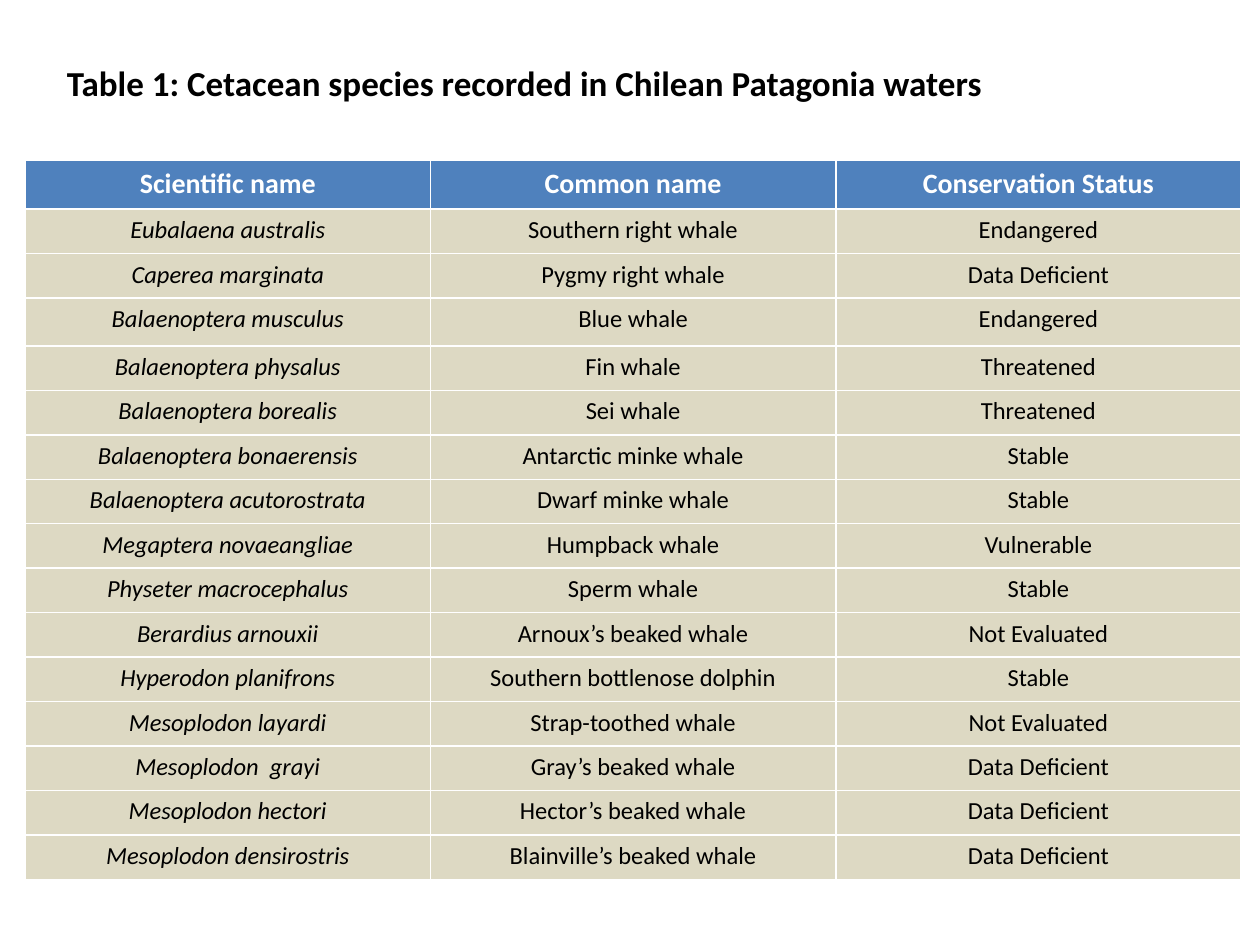
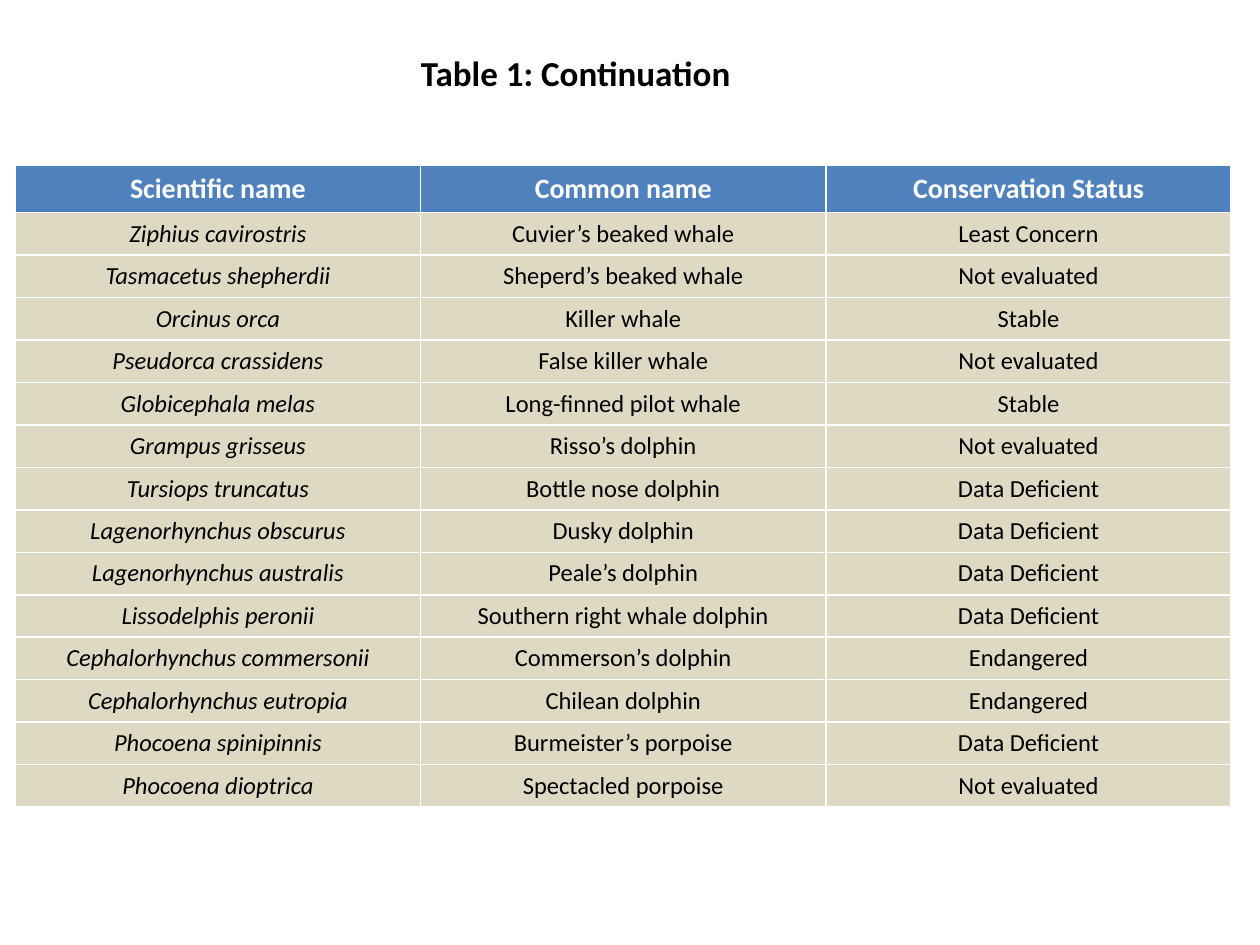
from pptx import Presentation
from pptx.dml.color import RGBColor
from pptx.enum.text import MSO_ANCHOR, MSO_AUTO_SIZE, PP_ALIGN
from pptx.util import Pt

BLUE = RGBColor(0x4F, 0x81, 0xBD)
SAND = RGBColor(0xDD, 0xD9, 0xC3)
WHITE = RGBColor(0xFF, 0xFF, 0xFF)
BLACK = RGBColor(0x00, 0x00, 0x00)
FACE = "Calibri"
WIDTH = 694.8
HEADS = ("Scientific name", "Common name", "Conservation Status")

FIRST = [
    ("Eubalaena australis", "Southern right whale", "Endangered"),
    ("Caperea marginata", "Pygmy right whale", "Data Deficient"),
    ("Balaenoptera musculus", "Blue whale", "Endangered"),
    ("Balaenoptera physalus", "Fin whale", "Threatened"),
    ("Balaenoptera borealis", "Sei whale", "Threatened"),
    ("Balaenoptera bonaerensis", "Antarctic minke whale", "Stable"),
    ("Balaenoptera acutorostrata", "Dwarf minke whale", "Stable"),
    ("Megaptera novaeangliae", "Humpback whale", "Vulnerable"),
    ("Physeter macrocephalus", "Sperm whale", "Stable"),
    ("Berardius arnouxii", "Arnoux’s beaked whale", "Not Evaluated"),
    ("Hyperodon planifrons", "Southern bottlenose dolphin", "Stable"),
    ("Mesoplodon layardi", "Strap-toothed whale", "Not Evaluated"),
    ("Mesoplodon  grayi", "Gray’s beaked whale", "Data Deficient"),
    ("Mesoplodon hectori", "Hector’s beaked whale", "Data Deficient"),
    ("Mesoplodon densirostris", "Blainville’s beaked whale", "Data Deficient"),
]

SECOND = [
    ("Ziphius cavirostris", "Cuvier’s beaked whale", "Least Concern"),
    ("Tasmacetus shepherdii", "Sheperd’s beaked whale", "Not evaluated"),
    ("Orcinus orca", "Killer whale", "Stable"),
    ("Pseudorca crassidens", "False killer whale", "Not evaluated"),
    ("Globicephala melas", "Long-finned pilot whale", "Stable"),
    ("Grampus grisseus", "Risso’s dolphin", "Not evaluated"),
    ("Tursiops truncatus", "Bottle nose dolphin", "Data Deficient"),
    ("Lagenorhynchus obscurus", "Dusky dolphin", "Data Deficient"),
    ("Lagenorhynchus australis", "Peale’s dolphin", "Data Deficient"),
    ("Lissodelphis peronii", "Southern right whale dolphin", "Data Deficient"),
    ("Cephalorhynchus commersonii", "Commerson’s dolphin", "Endangered"),
    ("Cephalorhynchus eutropia", "Chilean dolphin", "Endangered"),
    ("Phocoena spinipinnis", "Burmeister’s porpoise", "Data Deficient"),
    ("Phocoena dioptrica", "Spectacled porpoise", "Not evaluated"),
]


def style(para, size, color, align, bold=False, italic=False):
    para.alignment = align
    font = para.font
    font.name, font.size = FACE, Pt(size)
    font.bold, font.italic = bold, italic
    font.color.rgb = color


def add_title(slide, text, left, top, width, align):
    title = slide.shapes.title
    title.left, title.top = Pt(left), Pt(top)
    title.width, title.height = Pt(width), Pt(31.5)
    frame = title.text_frame
    frame.text = text
    frame.word_wrap = True
    frame.auto_size = MSO_AUTO_SIZE.NONE
    frame.vertical_anchor = MSO_ANCHOR.TOP
    style(frame.paragraphs[0], 20, BLACK, align, bold=True)


def fill_cell(cell, text, head, italic):
    cell.text = text
    cell.fill.solid()
    cell.fill.fore_color.rgb = BLUE if head else SAND
    style(cell.text_frame.paragraphs[0], 16 if head else 14,
          WHITE if head else BLACK, PP_ALIGN.CENTER, head, italic)


def add_grid(slide, species, left, top, heights):
    rows = [HEADS, *species]
    frame = slide.shapes.add_table(len(rows), len(HEADS), Pt(left), Pt(top),
                                   Pt(WIDTH), Pt(sum(heights)))
    table = frame.table
    table.horz_banding = False
    for col in table.columns:
        col.width = Pt(WIDTH / len(HEADS))
    for i, (row, height) in enumerate(zip(rows, heights)):
        table.rows[i].height = Pt(height)
        for j, text in enumerate(row):
            fill_cell(table.cell(i, j), text, i == 0, i > 0 and j == 0)


def main():
    deck = Presentation()
    deck.slide_width, deck.slide_height = Pt(720), Pt(540)
    layout = deck.slide_layouts[5]

    slide = deck.slides.add_slide(layout)
    add_title(slide, "Table 1: Cetacean species recorded in Chilean Patagonia waters",
              31, 31.7, 663, PP_ALIGN.LEFT)
    add_grid(slide, FIRST, 14.4, 91.7, [27.8] + [25.4] * 2 + [27.4] + [25.4] * 12)

    slide = deck.slides.add_slide(layout)
    add_title(slide, "Table 1: Continuation", 14.4, 26, 629.3, PP_ALIGN.CENTER)
    add_grid(slide, SECOND, 8.8, 94.7, [24.14] * 15)

    deck.save("out.pptx")


if __name__ == "__main__":
    main()
